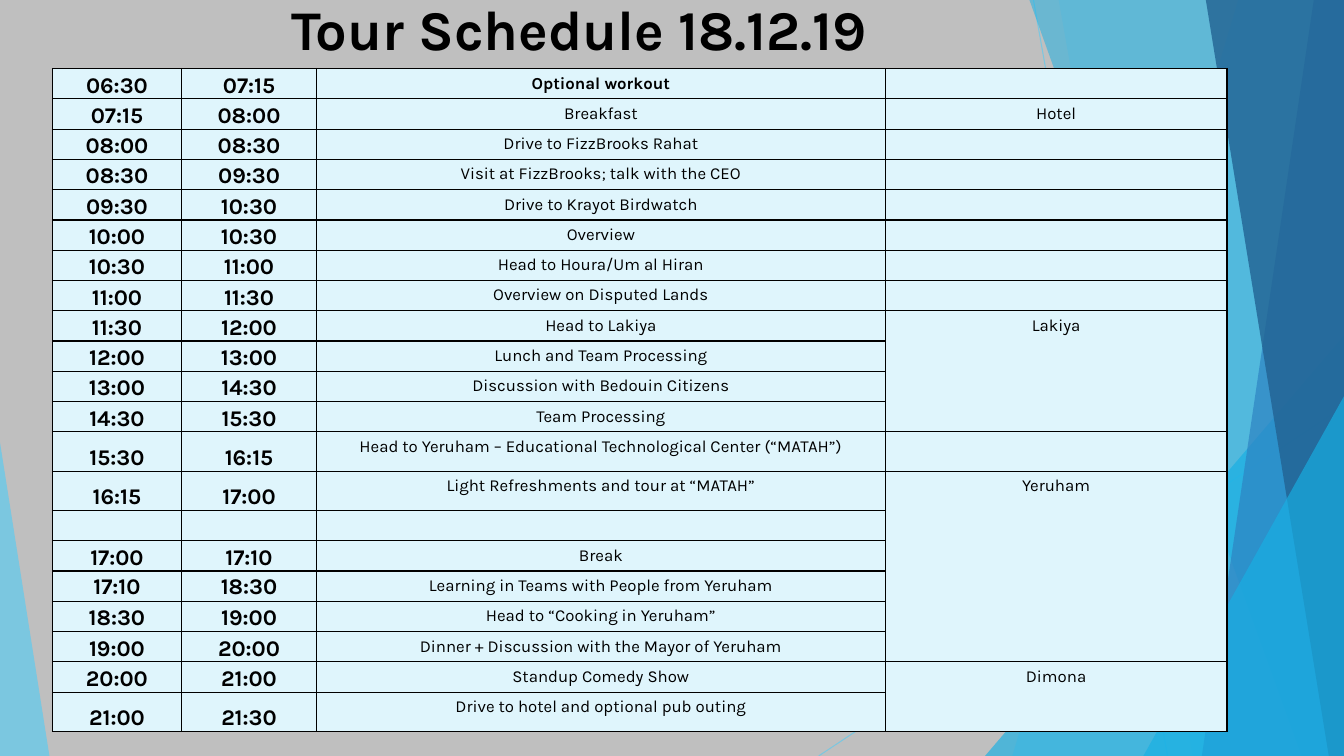
import lxml.etree
import pptx
import pptx.dml.color
import pptx.enum.shapes
import pptx.enum.text
import pptx.oxml
import pptx.oxml.ns
import pptx.util

RGBColor = pptx.dml.color.RGBColor
Inches = pptx.util.Inches
Pt = pptx.util.Pt
qn = pptx.oxml.ns.qn
ANCHOR = pptx.enum.text.MSO_ANCHOR
CENTER = pptx.enum.text.PP_ALIGN.CENTER

GREY = RGBColor(0xBF, 0xBF, 0xBF)
BLACK = RGBColor(0, 0, 0)
ICE = RGBColor(0xDF, 0xF5, 0xFC)
SKY = RGBColor(0x5F, 0xCB, 0xEF)
CYAN = RGBColor(0x17, 0xB0, 0xE4)
BLUE = RGBColor(0x2E, 0x83, 0xC3)
NAVY = RGBColor(0x22, 0x62, 0x92)

FONT = "Karla"
TITLE = {"name": FONT, "size": Pt(40), "bold": True}
TIME = {"name": FONT, "size": Pt(16), "bold": True}
ACTIVITY = {"name": FONT, "size": Pt(12), "bold": False}
HIGHLIGHT = {**ACTIVITY, "bold": True}
TIME_CELL = {
    "margin_left": Inches(0.01), "margin_right": Inches(0.01),
    "margin_top": Inches(0.01), "margin_bottom": 0,
    "vertical_anchor": ANCHOR.BOTTOM,
}

COLUMNS = (1.28, 1.34, 5.64, 3.39)
ROW_HEIGHT = 0.3
TALL_ROWS = {12: 0.39, 13: 0.39, 20: 0.39}
PLACE_SPANS = ((8, 11), (13, 18), (19, 20))
SCHEDULE = (
    ("06:30", "07:15", "Optional workout", ""),
    ("07:15", "08:00", "Breakfast", "Hotel"),
    ("08:00", "08:30", "Drive to FizzBrooks Rahat", ""),
    ("08:30", "09:30", "Visit at FizzBrooks; talk with the CEO", ""),
    ("09:30", "10:30", "Drive to Krayot Birdwatch", ""),
    ("10:00", "10:30", "Overview", ""),
    ("10:30", "11:00", "Head to Houra/Um al Hiran", ""),
    ("11:00", "11:30", "Overview on Disputed Lands", ""),
    ("11:30", "12:00", "Head to Lakiya", "Lakiya"),
    ("12:00", "13:00", "Lunch and Team Processing", ""),
    ("13:00", "14:30", "Discussion with Bedouin Citizens", ""),
    ("14:30", "15:30", "Team Processing", ""),
    ("15:30", "16:15", "Head to Yeruham – Educational Technological Center (“MATAH”)", ""),
    ("16:15", "17:00", "Light Refreshments and tour at “MATAH”", "Yeruham"),
    ("", "", "", ""),
    ("17:00", "17:10", "Break", ""),
    ("17:10", "18:30", "Learning in Teams with People from Yeruham", ""),
    ("18:30", "19:00", "Head to “Cooking in Yeruham”", ""),
    ("19:00", "20:00", "Dinner + Discussion with the Mayor of Yeruham", ""),
    ("20:00", "21:00", "Standup Comedy Show", "Dimona"),
    ("21:00", "21:30", "Drive to hotel and optional pub outing", ""),
)


def apply_format(target, values):
    """Set each attribute of the target from a dict of values."""
    for name, value in values.items():
        setattr(target, name, value)


def set_alpha(sp, percent):
    """Set the opacity of the solid colour inside a shape's properties."""
    color = sp._element.spPr.find(".//" + qn("a:srgbClr"))
    lxml.etree.SubElement(color, qn("a:alpha"), val=str(percent * 1000))


def finish_facet(sp, color, alpha):
    """Give a facet its translucent fill without outline or shadow."""
    sp.shadow.inherit = False
    sp.fill.solid()
    sp.fill.fore_color.rgb = color
    sp.line.fill.background()
    set_alpha(sp, alpha)


def add_ray(s, start, end):
    """Draw one thin translucent line."""
    sp = s.shapes.add_connector(
        pptx.enum.shapes.MSO_CONNECTOR.STRAIGHT, *map(Inches, start + end))
    sp.line.color.rgb = SKY
    sp.line.width = Pt(0.75)
    set_alpha(sp, 70)
    lxml.etree.SubElement(sp._element.spPr, qn("a:effectLst"))


def add_beam(s, box, top_x, bottom_x, color, alpha):
    """Draw a facet from a slanted left edge to the right edge of the box."""
    left, top, width, height = box
    right, bottom = left + width, top + height
    builder = s.shapes.build_freeform(Inches(left + top_x), Inches(top))
    corners = ((right, top), (right, bottom), (left + bottom_x, bottom))
    builder.add_line_segments([(Inches(x), Inches(y)) for x, y in corners])
    finish_facet(builder.convert_to_shape(), color, alpha)


def add_wedge(s, box, x, width, height, apex, color, alpha):
    """Draw a triangle standing on the bottom edge of the box."""
    left, top, _, box_height = box
    sp = s.shapes.add_shape(
        pptx.enum.shapes.MSO_SHAPE.ISOSCELES_TRIANGLE, Inches(left + x),
        Inches(top + box_height - height), Inches(width), Inches(height))
    sp.adjustments[0] = apex
    finish_facet(sp, color, alpha)


def add_facets(s, box):
    """Draw the overlapping blue facets at the sides of the box."""
    left, top, width, height = box
    bottom = top + height
    add_ray(s, (left + 10.25, top), (left + 11.58, bottom))
    add_ray(s, (left + width, top + 4.03), (left + 8.12, bottom))
    add_beam(s, box, 12.28, 10.04, SKY, 36)
    add_beam(s, box, 10.5, 11.83, SKY, 20)
    add_wedge(s, box, 9.77, 3.56, 4.17, 1, CYAN, 66)
    add_beam(s, box, 10.21, 12.91, CYAN, 50)
    add_beam(s, box, 13.03, 11.92, BLUE, 70)
    add_beam(s, box, 11.96, 13.18, NAVY, 80)
    add_wedge(s, box, 11.34, 1.99, 3.57, 1, CYAN, 66)
    add_wedge(s, box, 0, 0.49, 3.11, 0, SKY, 70)


def add_title(s, box):
    """Write the slide title."""
    tf = s.shapes.add_textbox(*map(Inches, box)).text_frame
    tf.word_wrap = True
    p = tf.paragraphs[0]
    p.line_spacing = 0.9
    r = p.add_run()
    r.text = "Tour Schedule 18.12.19"
    apply_format(r.font, TITLE)
    r.font.color.rgb = BLACK


def add_borders(cell):
    """Put a thin black line on all four sides of a cell."""
    tc_pr = cell._tc.get_or_add_tcPr()
    for i, side in enumerate(("lnL", "lnR", "lnT", "lnB")):
        ln = lxml.etree.Element(qn("a:" + side), w=str(Pt(1)))
        fill = lxml.etree.SubElement(ln, qn("a:solidFill"))
        lxml.etree.SubElement(fill, qn("a:srgbClr"), val=str(BLACK))
        tc_pr.insert(i, ln)


def fill_cell(cell, text, font):
    """Write one centred cell with its fill and borders."""
    cell.fill.solid()
    cell.fill.fore_color.rgb = ICE
    add_borders(cell)
    p = cell.text_frame.paragraphs[0]
    p.alignment = CENTER
    if text:
        r = p.add_run()
        r.text = text
        apply_format(r.font, font)
        r.font.color.rgb = BLACK
    else:
        size = str(int(ACTIVITY["size"].pt * 100))
        lxml.etree.SubElement(p._p, qn("a:endParaRPr"), sz=size)


def add_schedule(s, box):
    """Build the schedule table with its merged place cells."""
    table = s.shapes.add_table(
        len(SCHEDULE), len(COLUMNS), *map(Inches, box)).table
    apply_format(table, {"first_row": False, "horz_banding": False})
    for column, width in zip(table.columns, COLUMNS):
        column.width = Inches(width)
    for i, texts in enumerate(SCHEDULE):
        table.rows[i].height = Inches(TALL_ROWS.get(i, ROW_HEIGHT))
        for j, text in enumerate(texts):
            cell = table.cell(i, j)
            if j < 2:
                apply_format(cell, TIME_CELL)
                fill_cell(cell, text, TIME)
            else:
                fill_cell(cell, text, HIGHLIGHT if i == 0 else ACTIVITY)
            if j < 2 and text and texts[0] == "17:10":
                cell.vertical_anchor = ANCHOR.MIDDLE
    for first, last in PLACE_SPANS:
        table.cell(first, 3).merge(table.cell(last, 3))


def main():
    """Build and save the tour schedule slide."""
    prs = pptx.Presentation()
    prs.slide_width, prs.slide_height = Inches(13.33), Inches(7.5)
    s = prs.slides.add_slide(prs.slide_layouts[6])
    s.background.fill.solid()
    s.background.fill.fore_color.rgb = GREY
    add_facets(s, (0, 0, 13.33, 7.5))
    add_title(s, (2.79, -0.03, 6.88, 0.71))
    add_schedule(s, (0.52, 0.68, 11.65, 6.57))
    prs.save("out.pptx")


if __name__ == "__main__":
    main()
